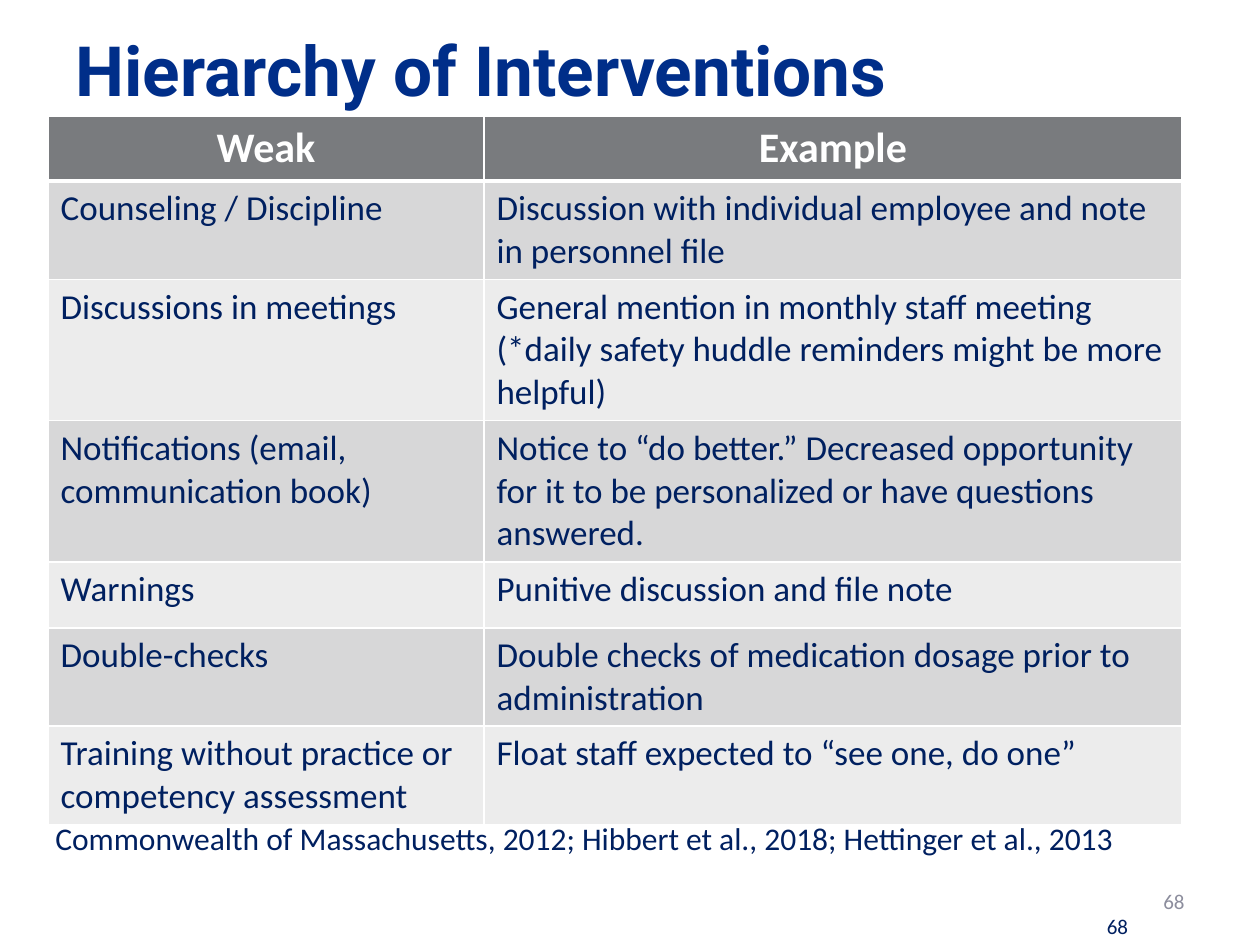
import pptx
import pptx.dml.color
import pptx.enum.text
import pptx.oxml
import pptx.oxml.ns
import pptx.util
from dataclasses import dataclass

EMU_PER_PX = 914400 / 126
ALIGN = pptx.enum.text.PP_ALIGN
ANCHOR = pptx.enum.text.MSO_ANCHOR


@dataclass(frozen=True)
class Theme:
    title_font: str = "Roboto"
    body_font: str = "Calibri"
    title: str = "002E89"
    text: str = "002060"
    muted: str = "8C8D9D"
    white: str = "FFFFFF"
    header_fill: str = "797B7E"
    bands: tuple = ("D7D7D8", "ECECEC")
    title_size: float = 39.6
    header_size: int = 24
    cell_size: int = 20
    source_size: int = 18
    number_size: int = 12


THEME = Theme()

COLUMNS = (436, 698)
ROW_HEIGHTS = (65, 98, 141, 141, 66, 98, 98)
ROWS = (
    ("Weak", "Example"),
    ("Counseling / Discipline",
     "Discussion with individual employee and note in personnel file"),
    ("Discussions in meetings",
     "General mention in monthly staff meeting (*daily safety huddle "
     "reminders might be more helpful)"),
    ("Notifications (email, communication book)",
     "Notice to “do better.” Decreased opportunity for it to be "
     "personalized or have questions answered."),
    ("Warnings", "Punitive discussion and file note"),
    ("Double-checks",
     "Double checks of medication dosage prior to administration"),
    ("Training without practice or competency assessment",
     "Float staff expected to “see one, do one”"),
)


def px(n):
    return pptx.util.Emu(round(n * EMU_PER_PX))


def rgb(color):
    return pptx.dml.color.RGBColor.from_string(color)


def write(tf, text, size, color, font=THEME.body_font, bold=False, align=ALIGN.LEFT):
    p = tf.paragraphs[0]
    p.alignment = align
    r = p.add_run()
    r.text = text
    r.font.name = font
    r.font.size = pptx.util.Pt(size)
    r.font.bold = bold
    r.font.color.rgb = rgb(color)


def add_title(s, text, box):
    sp = s.shapes.title
    sp.left, sp.top, sp.width, sp.height = map(px, box)
    sp.text_frame.vertical_anchor = ANCHOR.MIDDLE
    write(sp.text_frame, text, THEME.title_size, THEME.title, THEME.title_font, bold=True)


def add_text(s, text, box, size, color, align=ALIGN.LEFT, anchor=ANCHOR.MIDDLE):
    tf = s.shapes.add_textbox(*map(px, box)).text_frame
    tf.word_wrap = True
    tf.vertical_anchor = anchor
    write(tf, text, size, color, align=align)


def set_borders(cell, bottom):
    """Draw white borders; they must come before the fill in tcPr."""
    tcPr = cell._tc.get_or_add_tcPr()
    widths = {"lnL": 1, "lnR": 1, "lnT": 1, "lnB": bottom}
    for i, (tag, width) in enumerate(widths.items()):
        tcPr.insert(i, pptx.oxml.parse_xml(
            f'<a:{tag} {pptx.oxml.ns.nsdecls("a")} w="{pptx.util.Pt(width)}">'
            f'<a:solidFill><a:srgbClr val="{THEME.white}"/></a:solidFill></a:{tag}>'))


def style_cell(cell, text, row):
    header = row == 0
    cell.fill.solid()
    cell.fill.fore_color.rgb = rgb(
        THEME.header_fill if header else THEME.bands[(row - 1) % 2])
    # The rule below the header is heavier, on both sides of the shared edge
    set_borders(cell, bottom=3 if header else 1)
    if row == 1:
        top = cell._tc.tcPr.find(pptx.oxml.ns.qn("a:lnT"))
        top.set("w", str(pptx.util.Pt(3)))
    if header:
        write(cell.text_frame, text, THEME.header_size, THEME.white,
              bold=True, align=ALIGN.CENTER)
    else:
        write(cell.text_frame, text, THEME.cell_size, THEME.text)


def add_table(s, left, top):
    table = s.shapes.add_table(
        len(ROWS), len(COLUMNS), px(left), px(top),
        px(sum(COLUMNS)), px(sum(ROW_HEIGHTS))).table
    for column, width in zip(table.columns, COLUMNS):
        column.width = px(width)
    for i, (height, texts) in enumerate(zip(ROW_HEIGHTS, ROWS)):
        table.rows[i].height = px(height)
        for j, text in enumerate(texts):
            style_cell(table.cell(i, j), text, i)


def main():
    prs = pptx.Presentation()
    prs.slide_width, prs.slide_height = px(1260), px(945)
    s = prs.slides.add_slide(prs.slide_layouts[5])

    # Heading and table of weak interventions
    add_title(s, "Hierarchy of Interventions", (63, 21, 1134, 95))
    add_table(s, 48, 116)

    # Sources
    add_text(s, "Commonwealth of Massachusetts, 2012; Hibbert et al., 2018; "
                "Hettinger et al., 2013",
             (43, 813, 1097, 50), THEME.source_size, THEME.text, anchor=ANCHOR.TOP)

    # Page numbers
    add_text(s, "68", (1081, 907, 73, 38), THEME.number_size, THEME.text, ALIGN.CENTER)
    add_text(s, "68", (903, 876, 294, 50), THEME.number_size, THEME.muted, ALIGN.RIGHT)

    prs.save("out.pptx")


if __name__ == "__main__":
    main()
